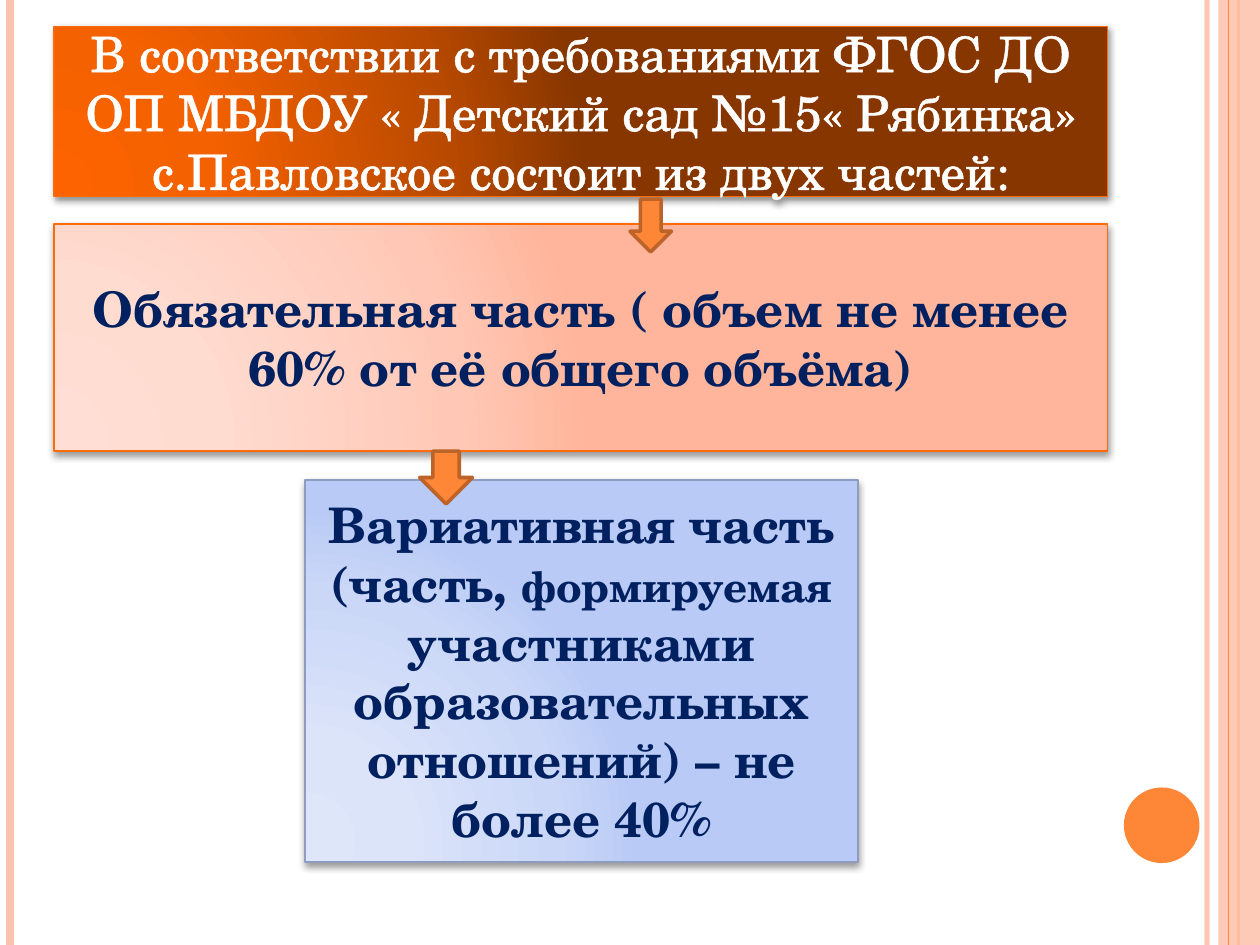
"""Build a slide on the two parts of a kindergarten programme."""
from lxml import etree
from pptx import Presentation
from pptx.dml.color import RGBColor
from pptx.enum.shapes import MSO_CONNECTOR, MSO_SHAPE
from pptx.enum.text import MSO_ANCHOR, MSO_AUTO_SIZE, PP_ALIGN
from pptx.oxml.ns import qn
from pptx.util import Inches, Pt

STRAIGHT = MSO_CONNECTOR.STRAIGHT
RECT, OVAL, DOWN = MSO_SHAPE.RECTANGLE, MSO_SHAPE.OVAL, MSO_SHAPE.DOWN_ARROW
MIDDLE, CENTER, NO_FIT = MSO_ANCHOR.MIDDLE, PP_ALIGN.CENTER, MSO_AUTO_SIZE.NONE

THEME = {
    "font": "TeX Gyre Schola", "big": 28, "small": 24,
    "white": "FFFFFF", "navy": "002060", "orange": "FE8637",
    "peach": "FEC3AE", "edge": "FF6B0A", "steel": "8D9CBF", "rust": "BC6329",
}
STOPS = (0, 30, 75, 100)
WIDE, HIGH = 10, 7.5

HEAD = {
    "at": (0.43, 0.21, 8.36, 1.35), "edge": "edge", "ink": "white", "bold": False,
    "grad": ("FD6400", "F46100", "B74900", "873600"), "shade": (42, 1.6),
    "runs": [("В соответствии с требованиями ФГОС ДО ОП МБДОУ « Детский сад №15"
              "« Рябинка» с.Павловское состоит из двух частей:", "big")],
}
PARTS = [
    {"at": (0.43, 1.78, 8.36, 1.8), "edge": "edge", "ink": "navy", "bold": True,
     "grad": ("FFDED5", "FFDBD0", "FFC8B6", "FFB59B"), "shade": (40, 2),
     "runs": [("Обязательная часть ( объем не менее 60% от её общего объёма)", "big")]},
    {"at": (2.42, 3.81, 4.39, 3.03), "edge": "steel", "ink": "navy", "bold": True,
     "grad": ("DEE6FA", "DBE4F9", "CAD7F7", "B8CAF5"), "shade": (40, 2),
     "runs": [("Вариативная часть (часть, ", "big"), ("формируемая", "small"),
              (" участниками образовательных отношений) – не более 40%", "big")]},
]
ARROWS = [(5, 1.58, 0.33, 0.42), (3.33, 3.58, 0.42, 0.42)]
RULES = [(9.58, "peach", 3, 93), (0.08, "peach", 4.5, 100), (9.83, "orange", 1.5, 100)]
BAND = (9.67, 0, 0.33, HIGH)
SEAM = (9.75, "orange", 0.75, 100)
DOT = (8.92, 6.25, 0.6, 0.6)


def tint(name):
    return RGBColor.from_string(THEME.get(name, name))


def node(base, tag, **attrs):
    return etree.SubElement(base, qn(tag), {k: str(v) for k, v in attrs.items()})


def fade(base, pct):
    node(next(base.iter(qn("a:srgbClr"))), "a:alpha", val=pct * 1000)


def rule(slide, x, color, width, pct):
    line = slide.shapes.add_connector(STRAIGHT, Inches(x), 0, Inches(x), Inches(HIGH))
    line.line.color.rgb = tint(color)
    line.line.width = Pt(width)
    props = line._element.spPr
    fade(props, pct)
    node(props, "a:effectLst")


def plain(slide, kind, at, color, edge=None):
    shape = slide.shapes.add_shape(kind, *map(Inches, at))
    shape.shadow.inherit = False
    shape.fill.solid()
    shape.fill.fore_color.rgb = tint(color)
    if edge:
        shape.line.color.rgb = tint(edge)
        shape.line.width = Pt(2)
    else:
        shape.line.fill.background()
    return shape


def glow(shape, colors):
    shape.fill.solid()
    old = shape._element.spPr.find(qn("a:solidFill"))
    grad = etree.Element(qn("a:gradFill"), rotWithShape="1")
    stops = node(grad, "a:gsLst")
    for pos, color in zip(STOPS, colors):
        node(node(stops, "a:gs", pos=pos * 1000), "a:srgbClr", val=color)
    way = node(grad, "a:path", path="circle")
    node(way, "a:fillToRect", l=5000, t=100000, r=120000, b=10000)
    old.getparent().replace(old, grad)


def cast(shape, pct, drop):
    shape.shadow.inherit = False
    effects = shape._element.spPr.find(qn("a:effectLst"))
    shade = node(effects, "a:outerShdw", blurRad=Pt(4), dist=Pt(drop),
                 dir=5400000, rotWithShape=0)
    node(shade, "a:srgbClr", val="000000")
    fade(shade, pct)


def panel(shape, part):
    shape.left, shape.top, shape.width, shape.height = map(Inches, part["at"])
    glow(shape, part["grad"])
    shape.line.color.rgb = tint(part["edge"])
    shape.line.width = Pt(1)
    cast(shape, *part["shade"])
    frame = shape.text_frame
    frame.word_wrap = True
    frame.auto_size = NO_FIT
    frame.vertical_anchor = MIDDLE
    para = frame.paragraphs[0]
    para.alignment = CENTER
    for text, size in part["runs"]:
        run = para.add_run()
        run.text = text
        font = run.font
        font.name, font.size = THEME["font"], Pt(THEME[size])
        font.bold = part["bold"]
        font.color.rgb = tint(part["ink"])


def outline(run, color, width):
    props = run.font._element
    line = etree.Element(qn("a:ln"), w=str(Pt(width)))
    node(node(line, "a:solidFill"), "a:srgbClr", val=THEME[color])
    props.insert(0, line)


def main():
    deck = Presentation()
    deck.slide_width, deck.slide_height = Inches(WIDE), Inches(HIGH)
    slide = deck.slides.add_slide(deck.slide_layouts[5])
    for mark in RULES:
        rule(slide, *mark)
    fade(plain(slide, RECT, BAND, "peach")._element.spPr, 87)
    rule(slide, *SEAM)
    plain(slide, OVAL, DOT, "orange")
    title = slide.shapes.title
    panel(title, HEAD)
    outline(title.text_frame.paragraphs[0].runs[0], "white", 1.45)
    for part in PARTS:
        panel(slide.shapes.add_shape(RECT, 0, 0, 0, 0), part)
    for at in ARROWS:
        plain(slide, DOWN, at, "orange", "rust")
    deck.save("out.pptx")


if __name__ == "__main__":
    main()
